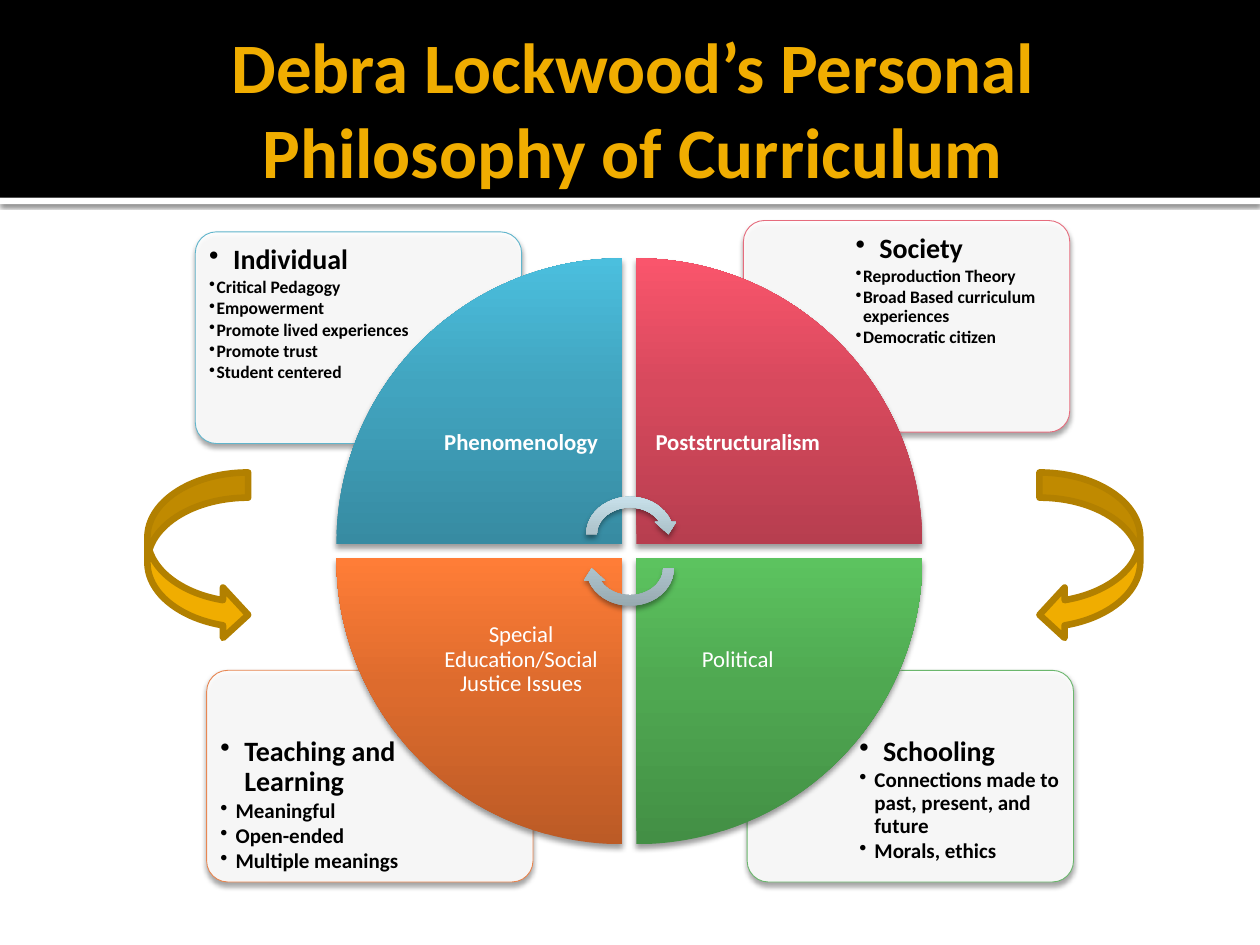
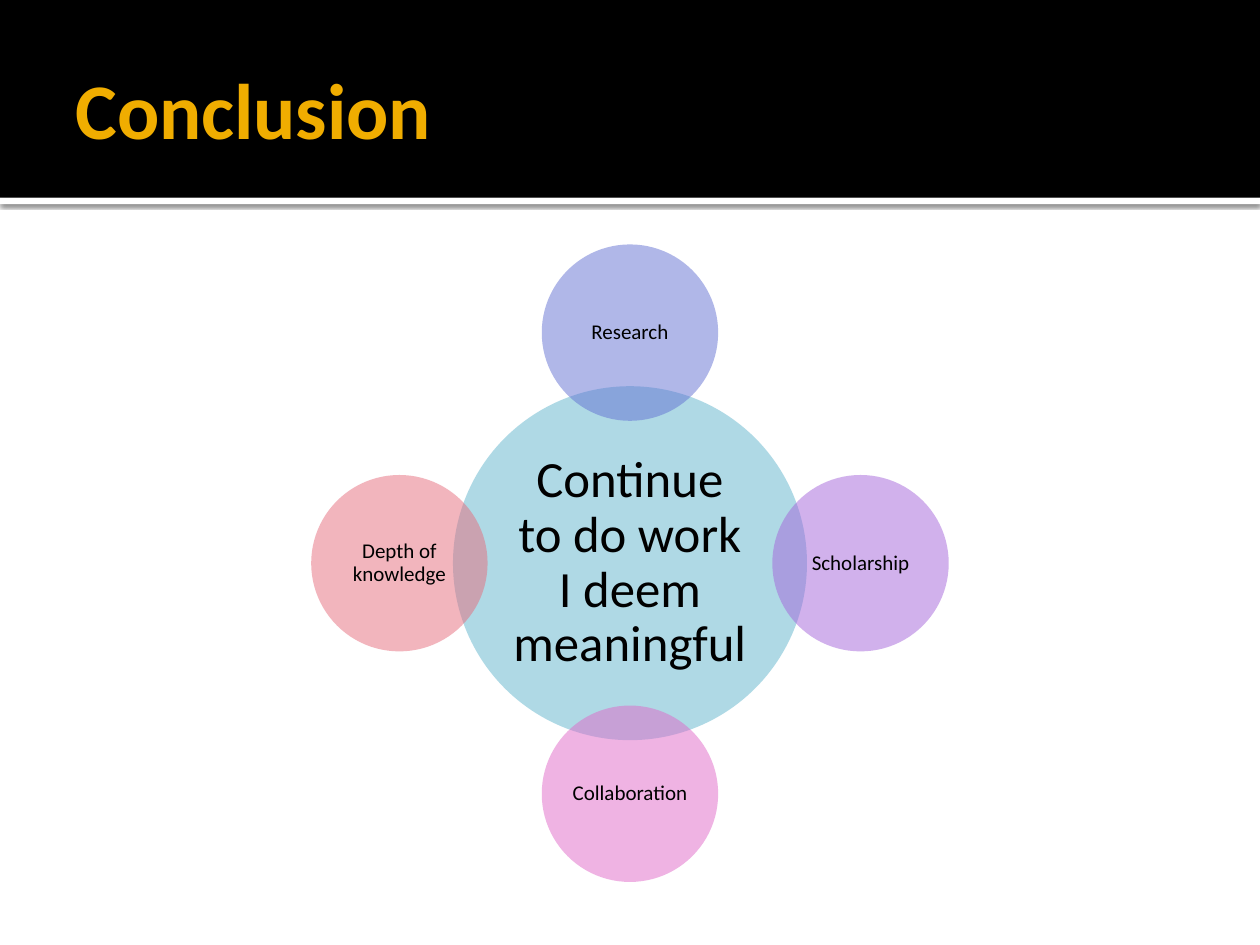
from lxml import etree
from pptx import Presentation
from pptx.dml.color import RGBColor
from pptx.enum.shapes import MSO_SHAPE
from pptx.enum.text import MSO_ANCHOR, PP_ALIGN
from pptx.oxml.ns import qn
from pptx.util import Inches, Pt

RECTANGLE, ROUNDED = MSO_SHAPE.RECTANGLE, MSO_SHAPE.ROUNDED_RECTANGLE
WEDGE, ELLIPSE = MSO_SHAPE.PIE_WEDGE, MSO_SHAPE.OVAL
CYCLE_ARROW = MSO_SHAPE.CIRCULAR_ARROW
RIGHT_CURVE, LEFT_CURVE = MSO_SHAPE.CURVED_RIGHT_ARROW, MSO_SHAPE.CURVED_LEFT_ARROW
TOP, MIDDLE = MSO_ANCHOR.TOP, MSO_ANCHOR.MIDDLE
LEFT, CENTER = PP_ALIGN.LEFT, PP_ALIGN.CENTER

FONT = "Calibri"
BLACK = RGBColor(0x00, 0x00, 0x00)
WHITE = RGBColor(0xFF, 0xFF, 0xFF)
GOLD = RGBColor(0xF0, 0xAD, 0x00)
DARK_GOLD = RGBColor(0xB2, 0x80, 0x00)
TEAL = RGBColor(0x60, 0xB5, 0xCC)
ROSE = RGBColor(0xE6, 0x6C, 0x7D)
ORANGE = RGBColor(0xE8, 0x86, 0x51)
GREEN = RGBColor(0x6B, 0xB7, 0x6D)
BLUE = RGBColor(0x62, 0x70, 0xD3)
PURPLE = RGBColor(0xA4, 0x65, 0xDA)
PINK = RGBColor(0xE0, 0x68, 0xC8)

# Gradients run from the bottom to the top
GRADIENT_STOPS = (0, 55, 100)
TEAL_GRADIENT = ("378BA2", "41A4BF", "4BBFDE")
ROSE_GRADIENT = ("B73E4F", "D7495D", "FA556C")
GREEN_GRADIENT = ("438F45", "4FA851", "5CC35F")
ORANGE_GRADIENT = ("BC5B26", "DD6B2D", "FF7D37")
GRAY_GRADIENT = ("95A7AE", "AFC5CD", "CCE5EF")

# Shadows: opacity %, blur and distance in points
SOFT_SHADOW = (38, 3.1, 2)
BAND_SHADOW = (60, 2.5, 0.8)

# Cards: left, top, outline, item size, item indent, heading, items
CARDS = [
    (5.93, 5.32, GREEN, 12, 0.12, "Schooling",
     ["Connections made to past, present, and future", "Morals, ethics"]),
    (1.64, 5.32, ORANGE, 12, 0.12, "Teaching and Learning",
     ["Meaningful", "Open-ended", "Multiple meanings"]),
    (5.9, 1.75, ROSE, 10, 0.06, "Society",
     ["Reproduction Theory", "Broad Based curriculum experiences",
      "Democratic citizen"]),
    (1.55, 1.84, TEAL, 10, 0.06, "Individual",
     ["Critical Pedagogy", "Empowerment", "Promote lived experiences",
      "Promote trust", "Student centered"]),
]
CARD_WIDTH, CARD_HEIGHT = 2.59, 1.68

# Wedges clockwise from the upper left: column, row, gradient, label, bold
WEDGES = [
    (0, 0, TEAL_GRADIENT, "Phenomenology", True),
    (1, 0, ROSE_GRADIENT, "Poststructuralism", True),
    (1, 1, GREEN_GRADIENT, "Political", False),
    (0, 1, ORANGE_GRADIENT, "Special Education/Social Justice Issues", False),
]
WEDGE_SIZE, WEDGE_LABEL_SIZE, WEDGE_STEP = 2.27, 1.61, 2.38
WEDGE_LEFT, WEDGE_TOP = 2.67, 2.05

# Circles: direction from the hub, colour, label
SATELLITES = [
    (0, -1, BLUE, "Research"),
    (1, 0, PURPLE, "Scholarship"),
    (0, 1, PINK, "Collaboration"),
    (-1, 0, ROSE, "Depth of knowledge"),
]
HUB_TEXT = "Continue to do work I deem meaningful"
HUB_X, HUB_Y, ORBIT = 5, 4.47, 1.83
HUB_SIZE, SATELLITE_SIZE = 2.81, 1.4


def add_child(parent, tag, **attributes):
    child = etree.SubElement(parent, qn(tag))
    for name, value in attributes.items():
        child.set(name, str(value))
    return child


def set_gradient(shape, colors):
    shape.fill.gradient()
    gradient = shape._element.spPr.find(qn("a:gradFill"))
    for child in list(gradient):
        gradient.remove(child)
    gradient.set("rotWithShape", "0")
    stops = add_child(gradient, "a:gsLst")
    for position, color in zip(GRADIENT_STOPS, colors):
        stop = add_child(stops, "a:gs", pos=position * 1000)
        add_child(stop, "a:srgbClr", val=color)
    add_child(gradient, "a:lin", ang=270 * 60000, scaled=0)


def add_shadow(shape, opacity, blur, distance):
    effects = shape._element.spPr.find(qn("a:effectLst"))
    shadow = add_child(effects, "a:outerShdw", blurRad=Pt(blur), dist=Pt(distance),
                       dir=90 * 60000, algn="ctr", rotWithShape=0)
    color = add_child(shadow, "a:srgbClr", val="000000")
    add_child(color, "a:alpha", val=opacity * 1000)


def add_figure(slide, kind, box, fill, opacity=100, line=None, line_width=0.5,
               shadow=None, rotation=0):
    shape = slide.shapes.add_shape(kind, *map(Inches, box))
    shape.rotation = rotation
    if isinstance(fill, RGBColor):
        shape.fill.solid()
        shape.fill.fore_color.rgb = fill
        if opacity < 100:
            color = shape._element.spPr.find(qn("a:solidFill"))[0]
            add_child(color, "a:alpha", val=opacity * 1000)
    else:
        set_gradient(shape, fill)
    if line is None:
        shape.line.fill.background()
    else:
        shape.line.color.rgb = line
        shape.line.width = Pt(line_width)
    shape.shadow.inherit = False
    if shadow:
        add_shadow(shape, *shadow)
    return shape


def add_text_frame(slide, box, insets, anchor):
    frame = slide.shapes.add_textbox(*map(Inches, box)).text_frame
    frame.word_wrap = True
    frame.vertical_anchor = anchor
    frame.margin_left, frame.margin_top, frame.margin_right, frame.margin_bottom = map(
        Inches, insets)
    return frame


def write(paragraph, text, size, color, bold=False, alignment=CENTER, spacing=0.9):
    paragraph.alignment = alignment
    paragraph.line_spacing = spacing
    run = paragraph.add_run()
    run.text = text
    run.font.name = FONT
    run.font.size = Pt(size)
    run.font.bold = bold
    run.font.color.rgb = color


def add_label(slide, box, inset, text, size, color, bold=False):
    frame = add_text_frame(slide, box, [inset] * 4, MIDDLE)
    write(frame.paragraphs[0], text, size, color, bold)


def set_bullet(paragraph, indent):
    properties = paragraph._p.get_or_add_pPr()
    properties.set("marL", str(Inches(indent)))
    properties.set("indent", str(-Inches(indent)))
    add_child(properties, "a:buChar", char="•")


def add_titled_slide(presentation, title, size, alignment):
    slide = presentation.slides.add_slide(presentation.slide_layouts[6])
    add_figure(slide, RECTANGLE, (0, 1.57, 10, 0.05), WHITE, shadow=BAND_SHADOW)
    add_figure(slide, RECTANGLE, (0, 0, 10, 1.57), BLACK)
    frame = add_text_frame(slide, (0.5, 0.17, 9, 1.37), (0.1, 0.05, 0.05, 0.05), MIDDLE)
    write(frame.paragraphs[0], title, size, GOLD, True, alignment, 1.0)
    return slide


def add_card(slide, left, top, outline, size, indent, heading, items):
    card = add_figure(slide, ROUNDED, (left, top, CARD_WIDTH, CARD_HEIGHT), WHITE,
                      opacity=90, line=outline, shadow=SOFT_SHADOW)
    card.adjustments[0] = 0.1
    # The text keeps to the card's outer corner, clear of the wheel
    text_left = left + (0.04 if left < 5 else 0.82)
    text_top = top + (0.04 if top < 4 else 0.46)
    frame = add_text_frame(slide, (text_left, text_top, 1.74, 1.19), [0.07] * 4, TOP)
    rows = [(heading, 16, 0.19)] + [(item, size, indent) for item in items]
    for index, (text, text_size, text_indent) in enumerate(rows):
        paragraph = frame.add_paragraph() if index else frame.paragraphs[0]
        write(paragraph, text, text_size, BLACK, True, LEFT)
        paragraph.space_after = Pt(1.4)
        set_bullet(paragraph, text_indent)


def build_philosophy(presentation):
    slide = add_titled_slide(
        presentation, "Debra Lockwood’s Personal Philosophy of Curriculum", 40.5, CENTER)
    for card in CARDS:
        add_card(slide, *card)

    # Wheel of four wedges, labels towards the centre
    label_shift = WEDGE_SIZE - WEDGE_LABEL_SIZE
    for turn, (column, row, gradient, label, bold) in enumerate(WEDGES):
        left = WEDGE_LEFT + column * WEDGE_STEP
        top = WEDGE_TOP + row * WEDGE_STEP
        add_figure(slide, WEDGE, (left, top, WEDGE_SIZE, WEDGE_SIZE), gradient,
                   shadow=SOFT_SHADOW, rotation=90 * turn)
        label_box = (left + label_shift * (1 - column), top + label_shift * (1 - row),
                     WEDGE_LABEL_SIZE, WEDGE_LABEL_SIZE)
        add_label(slide, label_box, 0.1, label, 13, WHITE, bold)

    # Cycle arrows at the centre, curved arrows at the sides
    for top, rotation in ((3.9, 0), (4.17, 180)):
        add_figure(slide, CYCLE_ARROW, (4.61, top, 0.78, 0.68), GRAY_GRADIENT,
                   shadow=SOFT_SHADOW, rotation=rotation)
    for kind, left in ((RIGHT_CURVE, 1.17), (LEFT_CURVE, 8.25)):
        add_figure(slide, kind, (left, 3.75, 0.8, 1.33), GOLD,
                   line=DARK_GOLD, line_width=3.78)


def add_circle(slide, center_x, center_y, size, color, text, text_size, inset):
    def centered_square(side):
        return center_x - side / 2, center_y - side / 2, side, side

    add_figure(slide, ELLIPSE, centered_square(size), color, opacity=50)
    add_label(slide, centered_square(size * 0.707), inset, text, text_size, BLACK)


def build_conclusion(presentation):
    slide = add_titled_slide(presentation, "Conclusion", 45, LEFT)
    add_circle(slide, HUB_X, HUB_Y, HUB_SIZE, TEAL, HUB_TEXT, 29, 0.04)
    for across, down, color, label in SATELLITES:
        add_circle(slide, HUB_X + across * ORBIT, HUB_Y + down * ORBIT,
                   SATELLITE_SIZE, color, label, 12, 0.02)


def main():
    presentation = Presentation()
    presentation.slide_width = Inches(10)
    presentation.slide_height = Inches(7.5)
    build_philosophy(presentation)
    build_conclusion(presentation)
    presentation.save("out.pptx")


if __name__ == "__main__":
    main()
